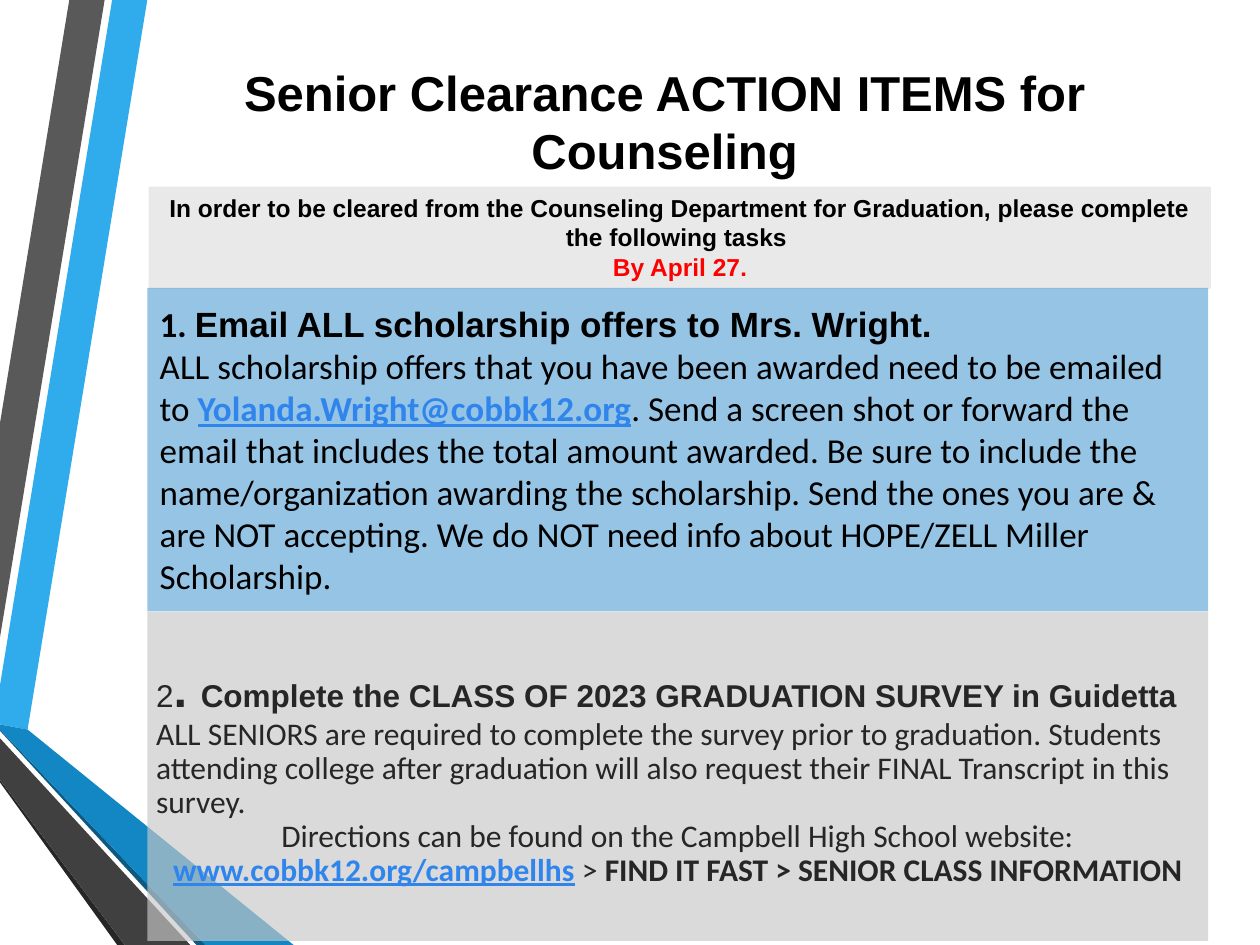
from dataclasses import dataclass

from lxml import etree
from pptx import Presentation
from pptx.dml.color import RGBColor
from pptx.enum.shapes import MSO_SHAPE
from pptx.enum.text import MSO_ANCHOR, PP_ALIGN
from pptx.oxml.ns import qn
from pptx.util import Pt

RECTANGLE = MSO_SHAPE.RECTANGLE
TOP, MIDDLE = MSO_ANCHOR.TOP, MSO_ANCHOR.MIDDLE
LEFT, CENTER = PP_ALIGN.LEFT, PP_ALIGN.CENTER
BLACK, CHARCOAL, RED, LINK = "000000", "262626", "FF0000", "3085ED"
HEADING_FONT, BODY_FONT = "Arial", "Calibri"


@dataclass
class Run:
    text: str
    size: float
    font: str = BODY_FONT
    color: str = BLACK
    bold: bool = False
    underline: bool = False
    line_break: bool = False


@dataclass
class Paragraph:
    runs: list[Run]
    alignment: PP_ALIGN = LEFT
    line_spacing: float = 1.0


@dataclass
class Panel:
    left: float
    top: float
    width: float
    height: float
    paragraphs: list[Paragraph]
    fill: str | None = None
    opacity: int = 100
    anchor: MSO_ANCHOR = MIDDLE
    side_inset: float = 7.2
    end_inset: float = 3.6


@dataclass
class Ribbon:
    color: str
    points: list[tuple[float, float]]


RIBBONS = [
    Ribbon("30ACEC", [(0, 391.7), (0, 414), (15.8, 416.9), (84.2, 0), (64.1, 0)]),
    Ribbon("595959", [(59.8, 0), (39.6, 0), (0, 241.9), (0, 364.3)]),
    Ribbon("262626", [(0, 445.7), (0, 447.1), (67, 540), (71.3, 540)]),
    Ribbon("0C5A82", [(0, 416.9), (0, 417.6), (112.3, 540), (117.4, 540)]),
    Ribbon("1287C3", [(0, 416.9), (117.4, 540), (167.8, 540), (15.8, 416.9), (0, 414)]),
    Ribbon("404040", [(0, 445.7), (71.3, 540), (108.7, 540), (0, 421.9)]),
]

TITLE = Panel(76.3, 31.7, 607, 74.9, [
    Paragraph([Run("Senior Clearance ACTION ITEMS for Counseling", 28, HEADING_FONT, bold=True)], CENTER),
])

INTRODUCTION = Panel(85, 106.6, 607, 58.3, [
    Paragraph([Run("In order to be cleared from the Counseling Department for Graduation, "
                   "please complete the following tasks ", 14, HEADING_FONT, bold=True)], CENTER),
    Paragraph([Run("By April 27", 14, HEADING_FONT, RED, True),
               Run(".", 13.5, HEADING_FONT, RED, True)], CENTER),
], "E9E9E9", anchor=TOP)

SCHOLARSHIPS = Panel(84.2, 164.5, 606.2, 185, [
    Paragraph([
        Run("1. ", 20, bold=True),
        Run("Email ALL scholarship offers to Mrs. Wright. ", 20, HEADING_FONT, bold=True, line_break=True),
        Run("ALL scholarship offers that you have been awarded need to be emailed to ", 20),
        Run("Yolanda.Wright@cobbk12.org", 20, color=LINK, bold=True, underline=True),
        Run(". Send a screen shot or forward the email that includes the total amount awarded. "
            "Be sure to include the name/organization awarding the scholarship. "
            "Send the ones you are & are NOT accepting. "
            "We do NOT need info about HOPE/ZELL Miller Scholarship.", 20),
    ]),
], "0070C0", 41)

SURVEY = Panel(84.2, 349.7, 606.2, 187.9, [
    Paragraph([
        Run("2", 18, HEADING_FONT, CHARCOAL),
        Run(". ", 28, HEADING_FONT, CHARCOAL, True),
        Run("Complete the CLASS OF 2023 GRADUATION SURVEY in Guidetta ", 18, HEADING_FONT, CHARCOAL, True,
            line_break=True),
        Run("ALL SENIORS are required to complete the survey prior to graduation. "
            "Students attending college after graduation will also request their "
            "FINAL Transcript in this survey.", 18, color=CHARCOAL),
    ], line_spacing=0.9),
    Paragraph([
        Run("Directions can be found on the Campbell High School website: ", 18, color=CHARCOAL),
        Run("www.cobbk12.org/campbellhs", 18, color=LINK, bold=True, underline=True),
        Run(" ", 18),
        Run("> ", 18, color=CHARCOAL),
        Run("FIND IT FAST > SENIOR CLASS INFORMATION", 18, color=CHARCOAL, bold=True),
    ], CENTER, 0.9),
], "C8C8C8", 66, side_inset=5, end_inset=2.9)


def paint(color_format, color: str) -> None:
    color_format.rgb = RGBColor.from_string(color)


def fill_shape(shape, color: str, opacity: int = 100) -> None:
    shape.shadow.inherit = False
    shape.line.fill.background()
    shape.fill.solid()
    paint(shape.fill.fore_color, color)
    if opacity < 100:
        color_element = shape.fill._xPr.find(qn("a:solidFill"))[0]
        etree.SubElement(color_element, qn("a:alpha"), val=str(opacity * 1000))


def draw_ribbon(slide, ribbon: Ribbon) -> None:
    start, *rest = [(Pt(x), Pt(y)) for x, y in ribbon.points]
    builder = slide.shapes.build_freeform(*start)
    builder.add_line_segments(rest, close=True)
    fill_shape(builder.convert_to_shape(), ribbon.color)


def add_run(paragraph, content: Run) -> None:
    run = paragraph.add_run()
    run.text = content.text
    run.font.size = Pt(content.size)
    run.font.name = content.font
    run.font.bold = content.bold
    run.font.underline = content.underline
    paint(run.font.color, content.color)
    if content.line_break:
        paragraph.add_line_break()


def draw_panel(slide, panel: Panel) -> None:
    bounds = [Pt(value) for value in (panel.left, panel.top, panel.width, panel.height)]
    if panel.fill:
        shape = slide.shapes.add_shape(RECTANGLE, *bounds)
        fill_shape(shape, panel.fill, panel.opacity)
    else:
        shape = slide.shapes.add_textbox(*bounds)
    frame = shape.text_frame
    frame.word_wrap = True
    frame.vertical_anchor = panel.anchor
    frame.margin_left = frame.margin_right = Pt(panel.side_inset)
    frame.margin_top = frame.margin_bottom = Pt(panel.end_inset)
    for index, content in enumerate(panel.paragraphs):
        paragraph = frame.add_paragraph() if index else frame.paragraphs[0]
        paragraph.alignment = content.alignment
        paragraph.line_spacing = content.line_spacing
        for run in content.runs:
            add_run(paragraph, run)


def main() -> None:
    presentation = Presentation()
    presentation.slide_width, presentation.slide_height = Pt(720), Pt(540)
    slide = presentation.slides.add_slide(presentation.slide_layouts[6])
    for ribbon in RIBBONS:
        draw_ribbon(slide, ribbon)
    for panel in (TITLE, INTRODUCTION, SCHOLARSHIPS, SURVEY):
        draw_panel(slide, panel)
    presentation.save("out.pptx")


if __name__ == "__main__":
    main()
